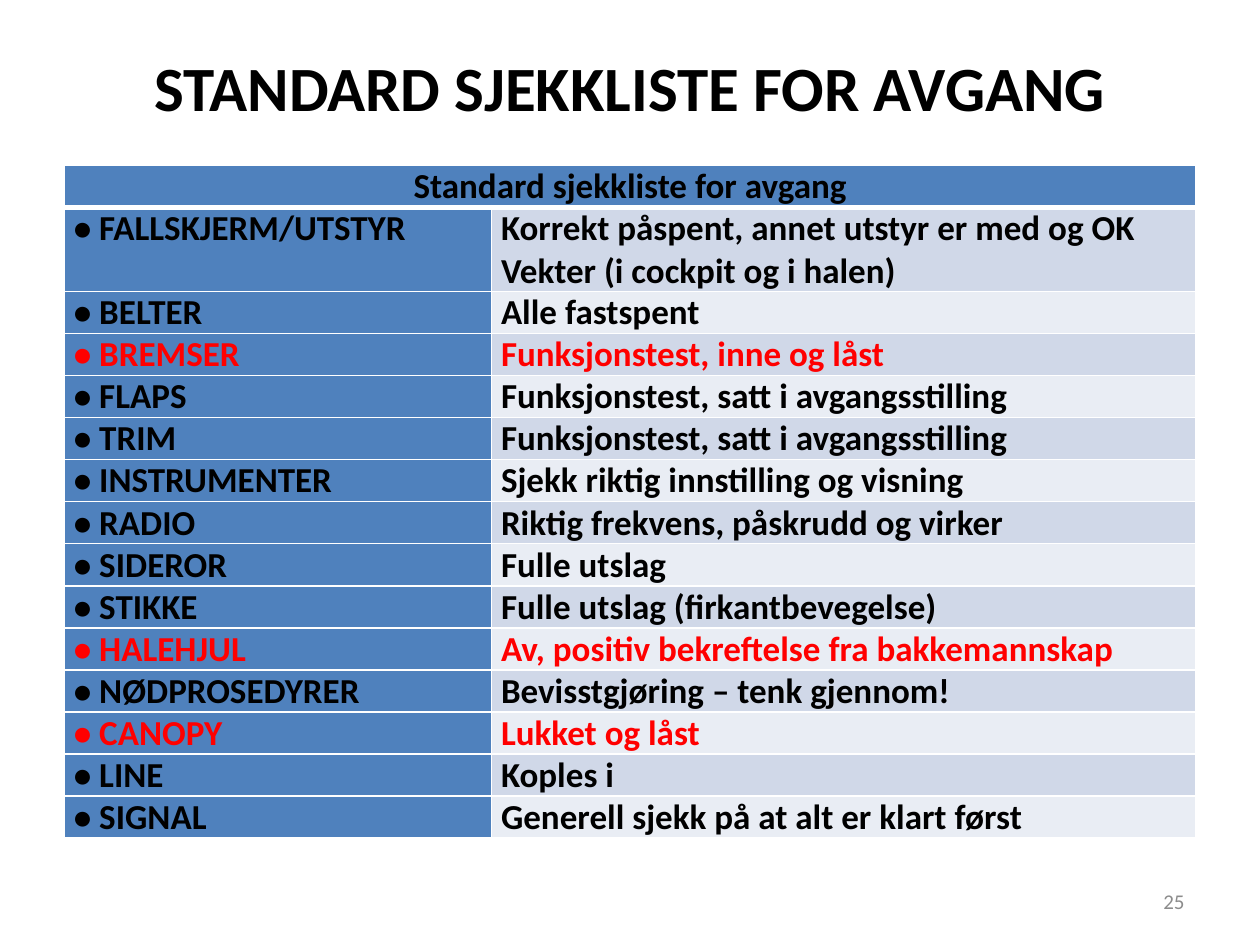
from typing import NamedTuple

from lxml import etree
from pptx import Presentation
from pptx.dml.color import RGBColor
from pptx.enum import text
from pptx.oxml import ns
from pptx.util import Cm, Pt

BLACK = RGBColor(0x00, 0x00, 0x00)
RED = RGBColor(0xFF, 0x00, 0x00)
GREY = RGBColor(0x8C, 0x8C, 0x8C)
BLUE = RGBColor(0x4F, 0x81, 0xBD)
WHITE = RGBColor(0xFF, 0xFF, 0xFF)
BANDS = (RGBColor(0xD0, 0xD8, 0xE8), RGBColor(0xE9, 0xED, 0xF4))
LEFT, MID, RIGHT = text.PP_ALIGN.LEFT, text.PP_ALIGN.CENTER, text.PP_ALIGN.RIGHT


class Check(NamedTuple):
    item: str
    task: str
    color: RGBColor = BLACK


CHECKS = (
    Check("FALLSKJERM/UTSTYR", "Korrekt påspent, annet utstyr er med og OK Vekter (i cockpit og i halen)"),
    Check("BELTER", "Alle fastspent"),
    Check("BREMSER", "Funksjonstest, inne og låst", RED),
    Check("FLAPS", "Funksjonstest, satt i avgangsstilling"),
    Check("TRIM", "Funksjonstest, satt i avgangsstilling"),
    Check("INSTRUMENTER", "Sjekk riktig innstilling og visning"),
    Check("RADIO", "Riktig frekvens, påskrudd og virker"),
    Check("SIDEROR", "Fulle utslag"),
    Check("STIKKE", "Fulle utslag (firkantbevegelse)"),
    Check("HALEHJUL", "Av, positiv bekreftelse fra bakkemannskap", RED),
    Check("NØDPROSEDYRER", "Bevisstgjøring – tenk gjennom!"),
    Check("CANOPY", "Lukket og låst", RED),
    Check("LINE", "Koples i"),
    Check("SIGNAL", "Generell sjekk på at alt er klart først"),
)


def assign(obj, form: dict) -> None:
    for name, value in form.items():
        setattr(obj, name, value)


def write(frame, words: str, size: int, color: RGBColor, align, bold: bool) -> None:
    para = frame.paragraphs[0]
    para.alignment = align
    run = para.add_run()
    run.text = words
    assign(run.font, {"name": "Calibri", "size": Pt(size), "bold": bold})
    run.font.color.rgb = color


def add_box(slide, place: tuple, words: str, size: int, color: RGBColor, align, bold: bool) -> None:
    frame = slide.shapes.add_textbox(*map(Cm, place)).text_frame
    assign(frame, {"word_wrap": True, "vertical_anchor": text.MSO_ANCHOR.MIDDLE})
    write(frame, words, size, color, align, bold)


def add_edges(cell, top: int, bottom: int) -> None:
    """Draw white borders; top and bottom are widths in points."""
    props = cell._tc.get_or_add_tcPr()
    for side, width in {"L": 1, "R": 1, "T": top, "B": bottom}.items():
        line = etree.SubElement(props, ns.qn(f"a:ln{side}"), w=str(Pt(width)))
        fill = etree.SubElement(line, ns.qn("a:solidFill"))
        etree.SubElement(fill, ns.qn("a:srgbClr"), val=str(WHITE))


def fill_cell(cell, words: str, color: RGBColor, back: RGBColor, align=LEFT) -> None:
    assign(cell, {"margin_left": Cm(0.19), "margin_right": Cm(0.19),
                  "margin_top": 0, "margin_bottom": 0})
    cell.fill.solid()
    cell.fill.fore_color.rgb = back
    if words:
        write(cell.text_frame, words, 20, color, align, True)


def add_list(slide) -> None:
    count = len(CHECKS) + 1
    grid = slide.shapes.add_table(count, 2, Cm(1.3), Cm(3.33), Cm(22.81), Cm(13.54)).table
    for col, width in zip(grid.columns, (8.61, 14.2)):
        col.width = Cm(width)
    for row in grid.rows:
        row.height = Cm(0.76)
    grid.rows[1].height = Cm(1.5)
    for row in range(count):
        for col in range(2):
            add_edges(grid.cell(row, col), 3 if row == 1 else 1, 3 if row == 0 else 1)

    grid.cell(0, 0).merge(grid.cell(0, 1))
    fill_cell(grid.cell(0, 0), "Standard sjekkliste for avgang", BLACK, BLUE, MID)
    fill_cell(grid.cell(0, 1), "", BLACK, BLUE)
    for row, check in enumerate(CHECKS, 1):
        fill_cell(grid.cell(row, 0), f"• {check.item}", check.color, BLUE)
        fill_cell(grid.cell(row, 1), check.task, check.color, BANDS[(row - 1) % 2])


def main() -> None:
    deck = Presentation()
    assign(deck, {"slide_width": Cm(25.4), "slide_height": Cm(19.05)})
    slide = deck.slides.add_slide(deck.slide_layouts[6])
    add_box(slide, (1.27, 0.76, 22.86, 1.96), "STANDARD SJEKKLISTE FOR AVGANG", 36, BLACK, MID, True)
    add_box(slide, (18.2, 17.66, 5.93, 1.01), "25", 12, GREY, RIGHT, False)
    add_list(slide)
    deck.save("out.pptx")


if __name__ == "__main__":
    main()
